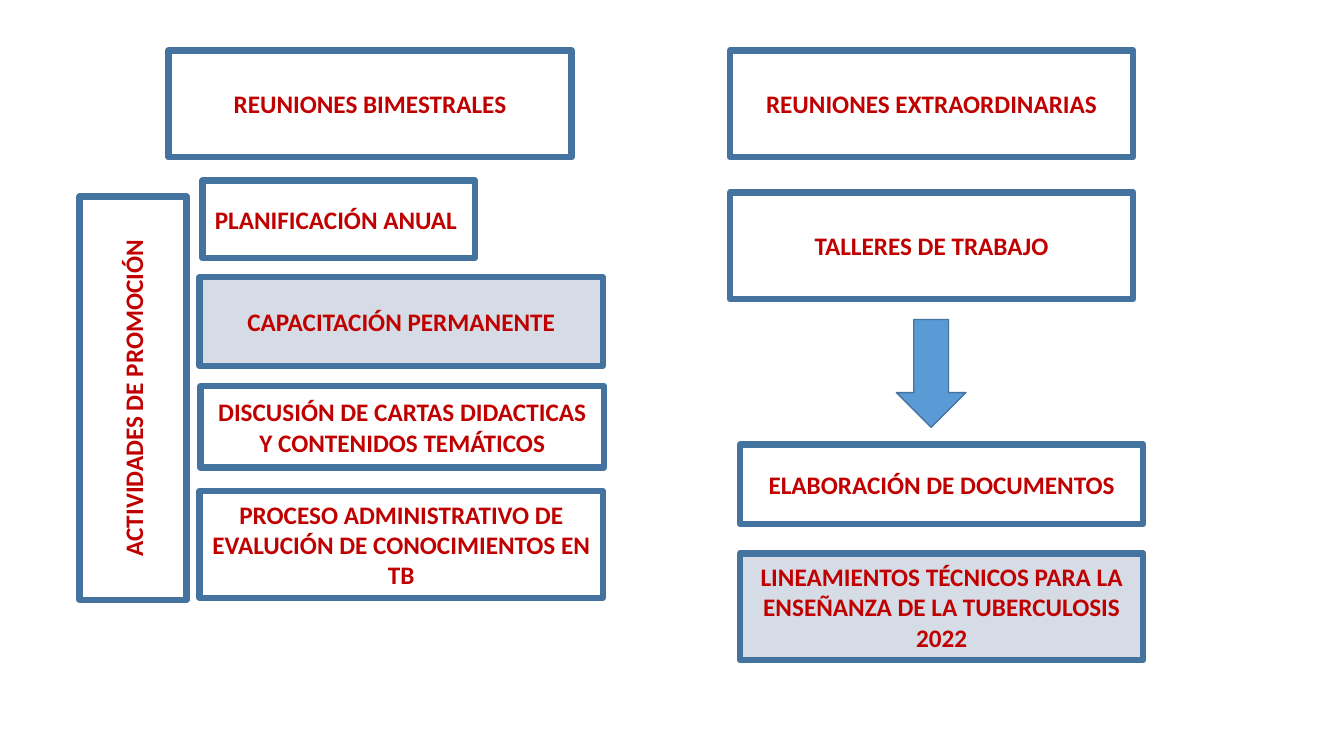
from pptx import Presentation
from pptx.dml.color import RGBColor
from pptx.enum.shapes import MSO_SHAPE as Shape
from pptx.enum.text import MSO_ANCHOR as Anchor, PP_ALIGN as Align
from pptx.util import Inches, Pt

BORDER, TEXT, HIGHLIGHT, ARROW = "43739E", "C00000", "D6DCE5", "5B9BD5"
BOX_WIDTH, BOX_HEIGHT = 4, 1.06


def color(value):
    return RGBColor.from_string(value)


def add_outlined(slide, kind, box, fill=None, line_width=4.5):
    shape = slide.shapes.add_shape(kind, *[Inches(length) for length in box])
    shape.shadow.inherit = False
    if fill:
        shape.fill.solid()
        shape.fill.fore_color.rgb = color(fill)
    else:
        shape.fill.background()
    shape.line.color.rgb = color(BORDER)
    shape.line.width = Pt(line_width)
    return shape


def add_label(slide, text, box, fill=None, rotation=0, size=18, bold=True):
    shape = add_outlined(slide, Shape.RECTANGLE, box, fill)
    shape.rotation = rotation
    frame = shape.text_frame
    frame.word_wrap = True
    frame.vertical_anchor = Anchor.MIDDLE
    frame.text = text
    for paragraph in frame.paragraphs:
        paragraph.alignment = Align.CENTER
        font = paragraph.runs[0].font
        font.name, font.size, font.bold = "Calibri", Pt(size), bold
        font.color.rgb = color(TEXT)


def add_bimonthly_meetings(slide, left, top):
    # Heading
    add_label(slide, "REUNIONES BIMESTRALES", (left + 0.99, top, BOX_WIDTH, BOX_HEIGHT))

    # Vertical side label, turned about its centre
    center_x, center_y = left + 0.64, top + 3.45
    add_label(slide, "ACTIVIDADES DE PROMOCIÓN",
              (center_x - BOX_WIDTH / 2, center_y - BOX_HEIGHT / 2, BOX_WIDTH, BOX_HEIGHT),
              rotation=270)

    # Activities: text, x and y offsets, width, height, fill
    activities = [
        ("PLANIFICACIÓN ANUAL ", 1.33, 1.29, 2.7, 0.77, None),
        ("CAPACITACIÓN PERMANENTE", 1.3, 2.25, BOX_WIDTH, 0.88, HIGHLIGHT),
        ("DISCUSIÓN DE CARTAS DIDACTICAS Y CONTENIDOS TEMÁTICOS",
         1.31, 3.33, BOX_WIDTH, 0.81, None),
        ("PROCESO ADMINISTRATIVO DE EVALUCIÓN DE CONOCIMIENTOS EN TB",
         1.3, 4.37, BOX_WIDTH, BOX_HEIGHT, None),
    ]
    for text, x, y, width, height, fill in activities:
        add_label(slide, text, (left + x, top + y, width, height), fill)


def add_extraordinary_meetings(slide, left, top):
    # Steps: text, x and y offsets, height, fill
    steps = [
        ("REUNIONES EXTRAORDINARIAS", 0, 0, BOX_HEIGHT, None),
        ("TALLERES DE TRABAJO", 0, 1.41, BOX_HEIGHT, None),
        ("ELABORACIÓN DE DOCUMENTOS", 0.1, 3.91, 0.79, None),
        ("LINEAMIENTOS TÉCNICOS PARA LA ENSEÑANZA DE LA TUBERCULOSIS\n2022",
         0.1, 4.99, BOX_HEIGHT, HIGHLIGHT),
    ]
    for text, x, y, height, fill in steps:
        add_label(slide, text, (left + x, top + y, BOX_WIDTH, height), fill)

    # Arrow from the workshops to the documents
    add_outlined(slide, Shape.DOWN_ARROW, (left + 1.65, top + 2.67, 0.69, 1.07),
                 ARROW, line_width=1)


def main():
    presentation = Presentation()
    presentation.slide_width = Inches(13.33)
    presentation.slide_height = Inches(7.5)
    slide = presentation.slides.add_slide(presentation.slide_layouts[6])
    add_bimonthly_meetings(slide, left=0.68, top=0.5)
    add_extraordinary_meetings(slide, left=7.24, top=0.5)
    presentation.save("out.pptx")


if __name__ == "__main__":
    main()
